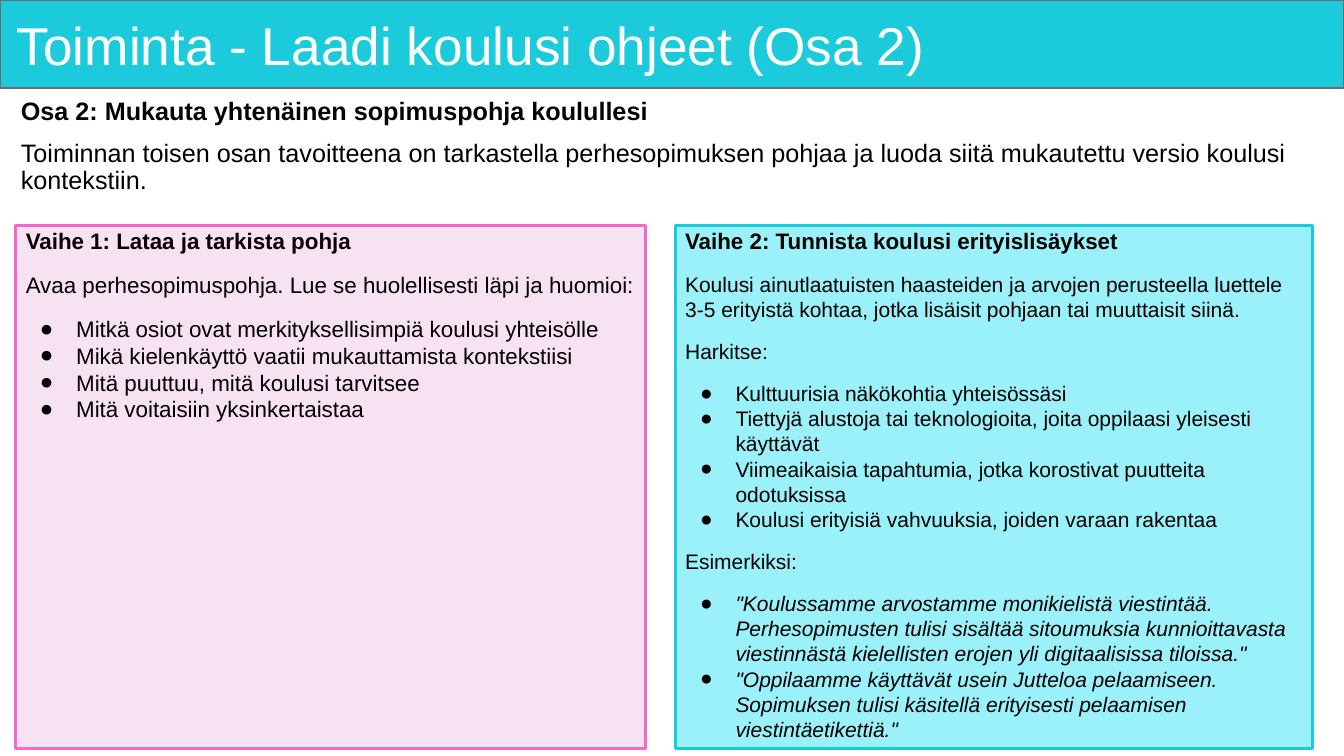
"""Builds the slide on adapting a family agreement template to a school."""
from dataclasses import dataclass

from lxml import etree
from pptx import Presentation
from pptx import util as u
from pptx.dml.color import RGBColor
from pptx.enum import shapes, text
from pptx.oxml.ns import qn


@dataclass(frozen=True)
class Theme:
    """Colours, type sizes and spacing of the slide."""
    font: str = "Arial"
    white: str = "FFFFFF"
    heading: str = "080301"
    body: str = "000000"
    teal: str = "1BCBDC"
    aqua: str = "9BF1F9"
    pink: str = "F766CA"
    blush: str = "F6E2F0"
    grey: str = "6C6E70"
    title_size: float = 38
    intro_size: float = 18
    step_size: float = 16
    dense_size: float = 15
    gap: float = 12
    tight: float = 0.9
    loose: float = 1.0


class SlideBuilder:
    """Holds the theme and the current slide."""

    def __init__(self, slide, theme):
        """Keep the slide and theme for every element."""
        self.slide = slide
        self.theme = theme

    def panel(self, place, fill, line, weight):
        """Add a filled and outlined rectangle."""
        rect = self.slide.shapes.add_shape(
            shapes.MSO_SHAPE.RECTANGLE, *map(u.Pt, place))
        rect.shadow.inherit = False
        rect.fill.solid()
        rect.fill.fore_color.rgb = RGBColor.from_string(fill)
        rect.line.color.rgb = RGBColor.from_string(line)
        rect.line.width = u.Pt(weight)
        return rect

    def textbox(self, place):
        """Add an empty text box."""
        return self.slide.shapes.add_textbox(*map(u.Pt, place))

    def frame(self, shape, anchor=text.MSO_ANCHOR.TOP, side=7.2, edge=3.6):
        """Set wrapping, anchor and insets of the text in a shape."""
        frame = shape.text_frame
        settings = {"word_wrap": True, "vertical_anchor": anchor,
                    "margin_left": u.Pt(side), "margin_right": u.Pt(side),
                    "margin_top": u.Pt(edge), "margin_bottom": u.Pt(edge)}
        for key, value in settings.items():
            setattr(frame, key, value)
        return frame

    def paragraph(self, frame, words, size, color, spacing, before=0,
                  indent=None, **style):
        """Write the next paragraph, bulleted when an indent is given."""
        first = frame.paragraphs[0]
        para = first if not first.runs else frame.add_paragraph()
        layout = {"alignment": text.PP_ALIGN.LEFT, "line_spacing": spacing,
                  "space_before": u.Pt(before), "space_after": u.Pt(0)}
        for key, value in layout.items():
            setattr(para, key, value)
        if indent:
            self.bullet(para, indent)
        run = para.add_run()
        run.text = words
        run.font.color.rgb = RGBColor.from_string(color)
        settings = {"name": self.theme.font, "size": u.Pt(size), **style}
        for key, value in settings.items():
            setattr(run.font, key, value)

    def bullet(self, para, hang):
        """Give a paragraph a round bullet with a hanging indent."""
        props = para._p.get_or_add_pPr()
        props.set("marL", str(u.Pt(36)))
        props.set("indent", str(-u.Pt(hang)))
        color = etree.SubElement(props, qn("a:buClr"))
        etree.SubElement(color, qn("a:srgbClr"), val=self.theme.body)
        etree.SubElement(props, qn("a:buFont"), typeface=self.theme.font)
        etree.SubElement(props, qn("a:buChar"), char="●")

    def title(self, words):
        """Add the title band and its text."""
        look = self.theme
        self.panel((0, 0, 960, 63), look.teal, look.grey, 1)
        frame = self.frame(self.textbox((7.6, 6.5, 940, 56.2)),
                           text.MSO_ANCHOR.MIDDLE, 4.3, 4.3)
        self.paragraph(frame, words, look.title_size, look.white, look.tight)

    def intro(self, heading, goal):
        """Add the part heading and the goal below it."""
        look = self.theme
        frame = self.frame(self.textbox((7.8, 67.3, 940, 74)))
        self.paragraph(frame, heading, look.intro_size, look.heading,
                       look.tight, bold=True)
        self.paragraph(frame, goal, look.intro_size, look.body,
                       look.tight, 10)

    def step(self, left, width, colors, heading, size, hang, sections):
        """Add a step panel from (lead paragraphs, bullets, italic) sections."""
        look = self.theme
        frame = self.frame(
            self.panel((left, 161, width, 373.5), *colors, 2.25))
        self.paragraph(frame, heading, look.step_size, look.heading,
                       look.tight, bold=True)
        for leads, bullets, italic in sections:
            for lead in leads:
                self.paragraph(frame, lead, size, look.body, look.loose,
                               look.gap)
            for index, point in enumerate(bullets):
                self.paragraph(frame, point, size, look.body, look.loose,
                               0 if index else look.gap, hang, italic=italic)


REVIEW = [
    (["Avaa perhesopimuspohja. Lue se huolellisesti läpi ja huomioi:"],
     ["Mitkä osiot ovat merkityksellisimpiä koulusi yhteisölle",
      "Mikä kielenkäyttö vaatii mukauttamista kontekstiisi",
      "Mitä puuttuu, mitä koulusi tarvitsee",
      "Mitä voitaisiin yksinkertaistaa"], False),
]
ADDITIONS = [
    (["Koulusi ainutlaatuisten haasteiden ja arvojen perusteella luettele "
      "3-5 erityistä kohtaa, jotka lisäisit pohjaan tai muuttaisit siinä.",
      "Harkitse:"],
     ["Kulttuurisia näkökohtia yhteisössäsi",
      "Tiettyjä alustoja tai teknologioita, joita oppilaasi yleisesti "
      "käyttävät",
      "Viimeaikaisia tapahtumia, jotka korostivat puutteita odotuksissa",
      "Koulusi erityisiä vahvuuksia, joiden varaan rakentaa"], False),
    (["Esimerkiksi:"],
     ['"Koulussamme arvostamme monikielistä viestintää. Perhesopimusten '
      "tulisi sisältää sitoumuksia kunnioittavasta viestinnästä kielellisten "
      'erojen yli digitaalisissa tiloissa."',
      '"Oppilaamme käyttävät usein Jutteloa pelaamiseen. Sopimuksen tulisi '
      'käsitellä erityisesti pelaamisen viestintäetikettiä."'], True),
]


def main():
    """Build and save the presentation."""
    deck = Presentation()
    deck.slide_width, deck.slide_height = u.Pt(960), u.Pt(540)
    theme = Theme()
    builder = SlideBuilder(deck.slides.add_slide(deck.slide_layouts[6]), theme)
    builder.title("Toiminta - Laadi koulusi ohjeet (Osa 2)")
    builder.step(11.3, 450, (theme.blush, theme.pink),
                 "Vaihe 1: Lataa ja tarkista pohja",
                 theme.step_size, 26, REVIEW)
    builder.step(482.3, 455.5, (theme.aqua, theme.teal),
                 "Vaihe 2: Tunnista koulusi erityislisäykset",
                 theme.dense_size, 25.2, ADDITIONS)
    builder.intro("Osa 2: Mukauta yhtenäinen sopimuspohja koulullesi",
                  "Toiminnan toisen osan tavoitteena on tarkastella "
                  "perhesopimuksen pohjaa ja luoda siitä mukautettu versio "
                  "koulusi kontekstiin.")
    deck.save("out.pptx")


if __name__ == "__main__":
    main()
